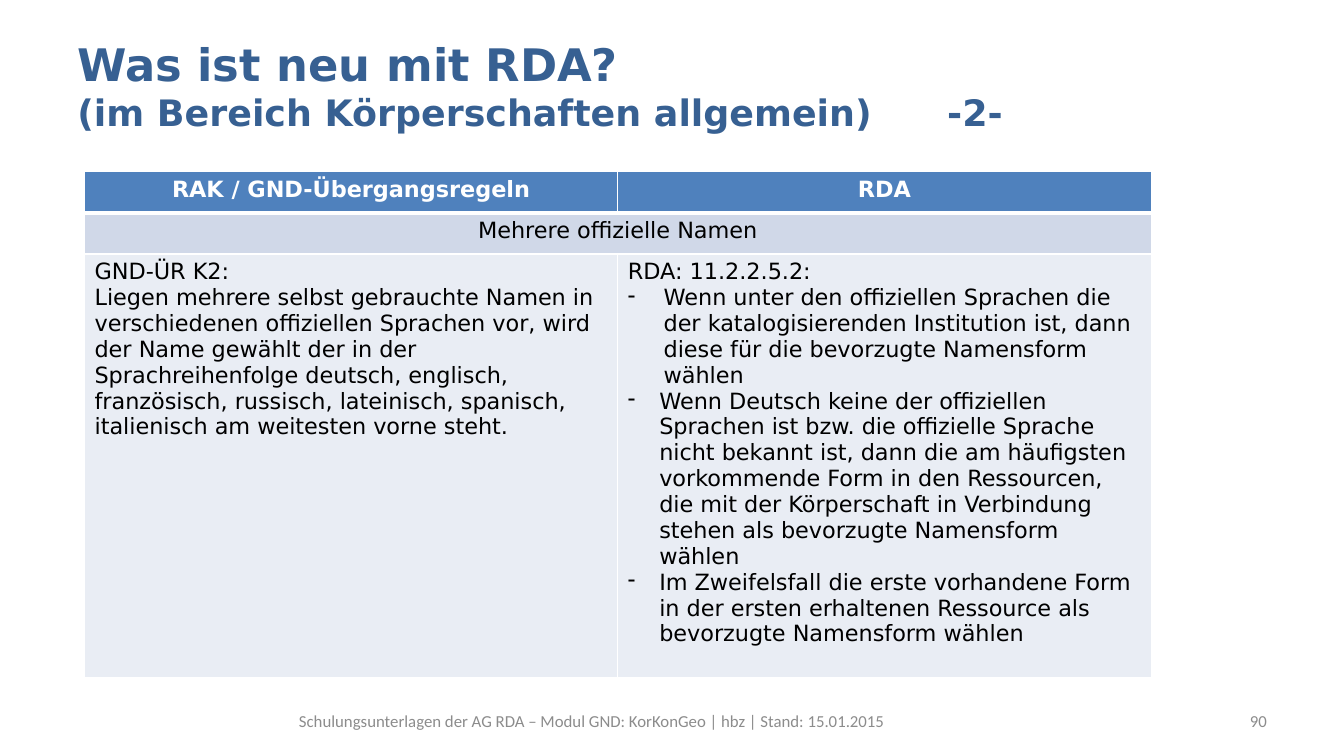
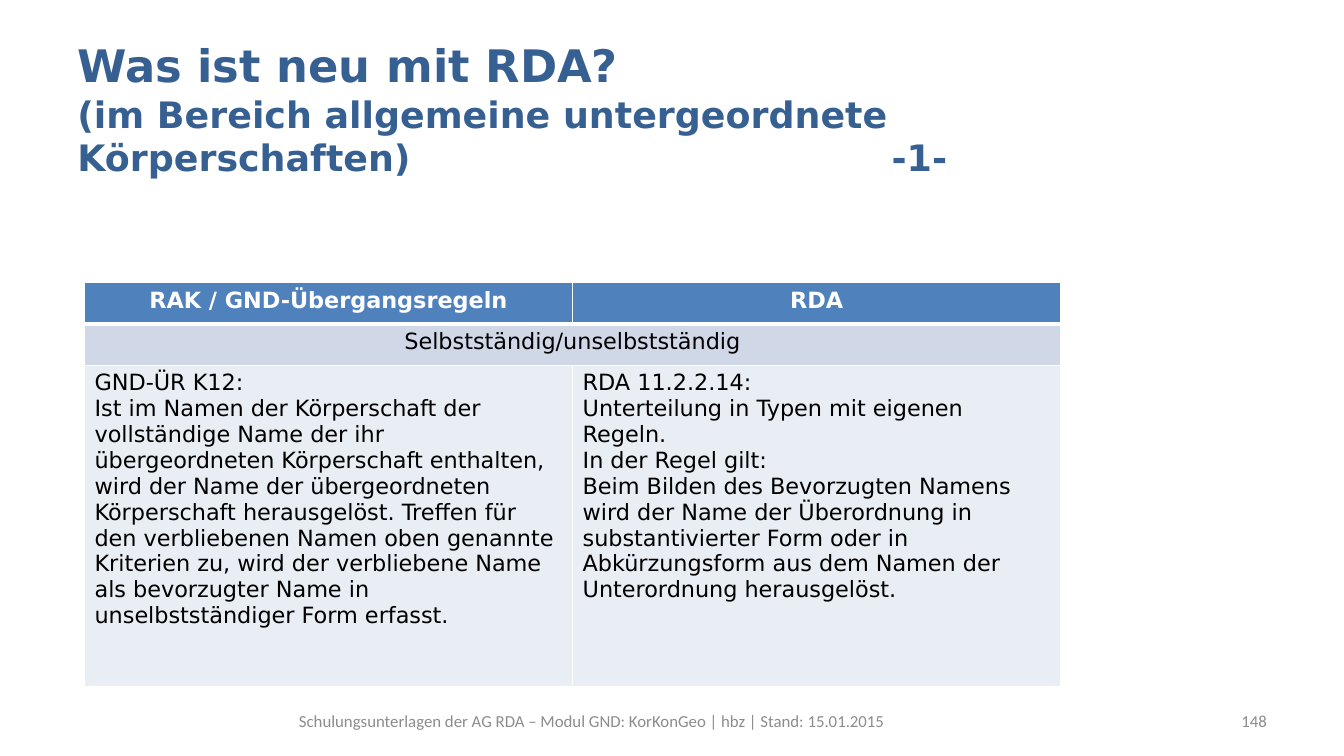
from lxml.etree import SubElement
from pptx import Presentation
from pptx.dml.color import RGBColor
from pptx.enum.text import MSO_ANCHOR, PP_ALIGN
from pptx.oxml.ns import qn
from pptx.util import Cm, Pt

TITLE_BLUE = RGBColor(0x37, 0x60, 0x92)
HEADER_BLUE = RGBColor(0x4F, 0x81, 0xBD)
TOPIC_BLUE = RGBColor(0xD0, 0xD8, 0xE8)
BODY_BLUE = RGBColor(0xE9, 0xED, 0xF4)
FOOTER_GREY = RGBColor(0x8C, 0x8C, 0x8C)
WHITE = RGBColor(0xFF, 0xFF, 0xFF)
BLACK = RGBColor(0x00, 0x00, 0x00)

TITLE = {"name": "DejaVu Sans", "size": Pt(32), "bold": True, "color": TITLE_BLUE}
SUBTITLE = {**TITLE, "size": Pt(26)}
HEADER = {"name": "DejaVu Sans", "size": Pt(16), "bold": True, "color": WHITE}
BODY = {**HEADER, "bold": False, "color": BLACK}
FOOTER = {"name": "Calibri", "size": Pt(12), "bold": False, "color": FOOTER_GREY}

MARGIN = 1.7
TABLE_LEFT = 2.13
ROW_HEIGHT = 1.04
COLUMN_HEADS = ["RAK / GND-Übergangsregeln", "RDA"]
FOOTER_TEXT = "Schulungsunterlagen der AG RDA – Modul GND: KorKonGeo | hbz | Stand: 15.01.2015"

PAGES = [
    {
        "subtitle": "(im Bereich Körperschaften allgemein)\t-2-",
        "title_height": 2.77,
        "tab": 21.92,
        "table_top": 4.32,
        "column_width": 13.44,
        "body_height": 10.68,
        "topic": "Mehrere offizielle Namen",
        "body": [
            [
                ("GND-ÜR K2:", 0),
                ("Liegen mehrere selbst gebrauchte Namen in verschiedenen offiziellen "
                 "Sprachen vor, wird der Name gewählt der in der Sprachreihenfolge "
                 "deutsch, englisch, französisch, russisch, lateinisch, spanisch, "
                 "italienisch am weitesten vorne steht.", 0),
            ],
            [
                ("RDA: 11.2.2.5.2:", 0),
                ("Wenn unter den offiziellen Sprachen die der katalogisierenden "
                 "Institution ist, dann diese für die bevorzugte Namensform wählen", 0.9),
                ("Wenn Deutsch keine der offiziellen Sprachen ist bzw. die offizielle "
                 "Sprache nicht bekannt ist, dann die am häufigsten vorkommende Form in "
                 "den Ressourcen, die mit der Körperschaft in Verbindung stehen als "
                 "bevorzugte Namensform wählen", 0.79),
                ("Im Zweifelsfall die erste vorhandene Form in der ersten erhaltenen "
                 "Ressource als bevorzugte Namensform wählen", 0.79),
            ],
        ],
        "number": "90",
    },
    {
        "subtitle": "(im Bereich allgemeine untergeordnete Körperschaften)\t-1-",
        "title_height": 3.96,
        "tab": 20.52,
        "table_top": 7.12,
        "column_width": 12.3,
        "body_height": 8.1,
        "topic": "Selbstständig/unselbstständig",
        "body": [
            [
                ("GND-ÜR K12:", 0),
                ("Ist im Namen der Körperschaft der vollständige Name der ihr "
                 "übergeordneten Körperschaft enthalten, wird der Name der "
                 "übergeordneten Körperschaft herausgelöst. Treffen für den "
                 "verbliebenen Namen oben genannte Kriterien zu, wird der verbliebene "
                 "Name als bevorzugter Name in unselbstständiger Form erfasst.", 0),
            ],
            [
                ("RDA 11.2.2.14:", 0),
                ("Unterteilung in Typen mit eigenen Regeln.", 0),
                ("In der Regel gilt:", 0),
                ("Beim Bilden des Bevorzugten Namens wird der Name der Überordnung in "
                 "substantivierter Form oder in Abkürzungsform aus dem Namen der "
                 "Unterordnung herausgelöst.", 0),
            ],
        ],
        "number": "148",
    },
]


def add_span(para, text, style):
    span = para.add_run()
    span.text = text
    for name, value in style.items():
        if name == "color":
            span.font.color.rgb = value
        else:
            setattr(span.font, name, value)


def add_box(page, left, top, width, height):
    box = page.shapes.add_textbox(Cm(left), Cm(top), Cm(width), Cm(height))
    frame = box.text_frame
    frame.word_wrap = True
    frame.vertical_anchor = MSO_ANCHOR.MIDDLE
    return frame.paragraphs[0]


def add_title(page, content):
    para = add_box(page, MARGIN, 0.76, 24.23, content["title_height"])
    tabs = SubElement(para._p.get_or_add_pPr(), qn("a:tabLst"))
    SubElement(tabs, qn("a:tab"), pos=str(Cm(content["tab"])), algn="l")
    add_span(para, "Was ist neu mit RDA?", TITLE)
    para.add_line_break()
    add_span(para, content["subtitle"], SUBTITLE)


def add_footer(page, left, width, text, alignment):
    para = add_box(page, left, 17.65, width, 1.02)
    para.alignment = alignment
    add_span(para, text, FOOTER)


def add_dash(para, indent):
    properties = para._p.get_or_add_pPr()
    properties.set("marL", str(Cm(indent)))
    properties.set("indent", str(-Cm(indent)))
    SubElement(properties, qn("a:buChar"), char="-")


def format_cell(cell, color, top=1, bottom=1):
    properties = cell._tc.get_or_add_tcPr()
    for side, width in {"L": 1, "R": 1, "T": top, "B": bottom}.items():
        line = SubElement(properties, qn(f"a:ln{side}"), w=str(Pt(width)))
        fill = SubElement(line, qn("a:solidFill"))
        SubElement(fill, qn("a:srgbClr"), val=str(WHITE))
    cell.fill.solid()
    cell.fill.fore_color.rgb = color


def write_cell(cell, entries, style, alignment=PP_ALIGN.LEFT):
    frame = cell.text_frame
    for index, (text, indent) in enumerate(entries):
        para = frame.add_paragraph() if index else frame.paragraphs[0]
        para.alignment = alignment
        if indent:
            add_dash(para, indent)
        add_span(para, text, style)


def add_comparison(page, content):
    heights = [ROW_HEIGHT, ROW_HEIGHT, content["body_height"]]
    width = content["column_width"]
    table = page.shapes.add_table(
        3, 2, Cm(TABLE_LEFT), Cm(content["table_top"]), Cm(2 * width), Cm(sum(heights))
    ).table
    table.horz_banding = False
    for row, height in zip(table.rows, heights):
        row.height = Cm(height)
    for index, column in enumerate(table.columns):
        column.width = Cm(width)
        header, topic, body = (table.cell(row, index) for row in range(3))
        format_cell(header, HEADER_BLUE, bottom=3)
        format_cell(topic, TOPIC_BLUE, top=3)
        format_cell(body, BODY_BLUE)
        write_cell(header, [(COLUMN_HEADS[index], 0)], HEADER, PP_ALIGN.CENTER)
        write_cell(body, content["body"][index], BODY)
    topic = table.cell(1, 0)
    topic.merge(table.cell(1, 1))
    write_cell(topic, [(content["topic"], 0)], BODY, PP_ALIGN.CENTER)


def main():
    deck = Presentation()
    deck.slide_width = Cm(33.87)
    deck.slide_height = Cm(19.05)
    for content in PAGES:
        page = deck.slides.add_slide(deck.slide_layouts[6])
        add_title(page, content)
        add_comparison(page, content)
        add_footer(page, MARGIN, 26.44, FOOTER_TEXT, PP_ALIGN.CENTER)
        add_footer(page, 29.46, 2.72, content["number"], PP_ALIGN.RIGHT)
    deck.save("out.pptx")


if __name__ == "__main__":
    main()
